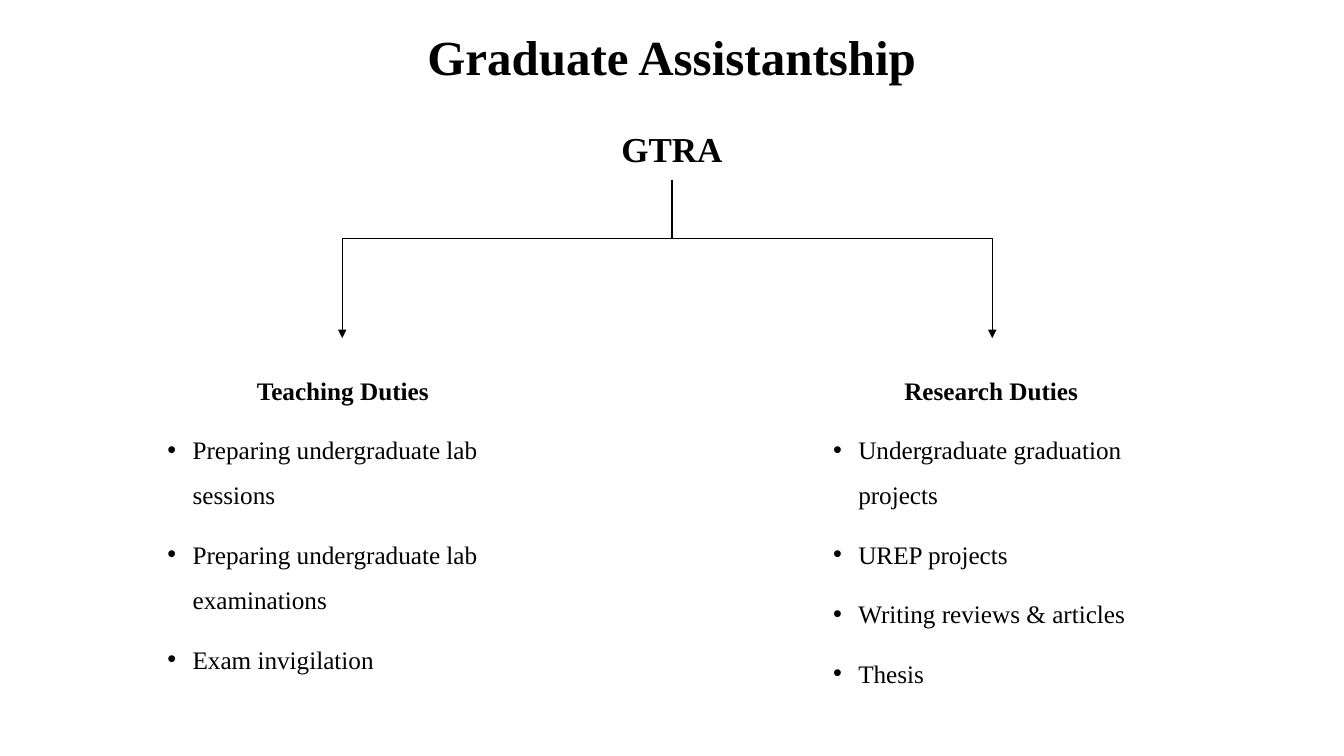
import pptx
import pptx.util
import pptx.dml.color
import pptx.enum.shapes
import pptx.enum.text
import pptx.oxml.ns
import lxml.etree

PX = 9525  # EMU per px, 96 px to the inch
FONT = "Times New Roman"
COLORS = {"background": "FFFFFF", "ink": "000000"}
CENTER = pptx.enum.text.PP_ALIGN.CENTER
INK = pptx.dml.color.RGBColor.from_string(COLORS["ink"])

presentation = pptx.Presentation()
presentation.slide_width = 1280 * PX
presentation.slide_height = 720 * PX
slide = presentation.slides.add_slide(presentation.slide_layouts[6])
slide.background.fill.solid()
slide.background.fill.fore_color.rgb = pptx.dml.color.RGBColor.from_string(COLORS["background"])


def add_text(left, top, width, height, lines, size):
    """Add a text box with a bold centred first line; later lines are bullets."""
    shape = slide.shapes.add_textbox(left * PX, top * PX, width * PX, height * PX)
    text_frame = shape.text_frame
    text_frame.word_wrap = True
    text_frame.text = "\n".join(lines)
    for index, paragraph in enumerate(text_frame.paragraphs):
        if index == 0:
            paragraph.alignment = CENTER
        else:
            properties = paragraph._p.get_or_add_pPr()
            properties.set("marL", str(24 * PX))
            properties.set("indent", str(-24 * PX))
            paragraph.space_before = pptx.util.Pt(10)
            for tag, key, value in (("a:buFont", "typeface", "Arial"), ("a:buChar", "char", "•")):
                element = lxml.etree.SubElement(properties, pptx.oxml.ns.qn(tag))
                element.set(key, value)
        font = paragraph.runs[0].font
        font.name = FONT
        font.size = pptx.util.Pt(size)
        font.bold = index == 0
        font.color.rgb = INK
    return text_frame


def add_line(start_x, start_y, end_x, end_y, arrow=False):
    connector = slide.shapes.add_connector(
        pptx.enum.shapes.MSO_CONNECTOR.STRAIGHT,
        start_x * PX, start_y * PX, end_x * PX, end_y * PX)
    connector.line.color.rgb = INK
    connector.line.width = pptx.util.Pt(1)
    if arrow:
        tail = lxml.etree.SubElement(connector.line._get_or_add_ln(), pptx.oxml.ns.qn("a:tailEnd"))
        tail.set("type", "triangle")
    lxml.etree.SubElement(connector._element.spPr, pptx.oxml.ns.qn("a:effectLst"))


# Title
title = add_text(88, 16, 1104, 139, ["Graduate Assistantship"], 35)
title.margin_top = 16 * PX
title.paragraphs[0].line_spacing = 0.9

# Duty lists
duties = [
    (150, 353, 334, ["Teaching Duties", "Preparing undergraduate lab sessions",
                     "Preparing undergraduate lab examinations", "Exam invigilation"]),
    (784, 320, 321, ["Research Duties", "Undergraduate graduation projects", "UREP projects",
                     "Writing reviews & articles", "Thesis"]),
]
for left, width, height, lines in duties:
    text_frame = add_text(left, 338, width, height, lines, 18)
    for paragraph in text_frame.paragraphs:
        paragraph.line_spacing = 1.5

# Branching lines from the root to both lists
branch_xs = (326, 945)
branch_y = 227
add_line(640, 171, 640, branch_y)
add_line(branch_xs[0], branch_y, branch_xs[1], branch_y)
for branch_x in branch_xs:
    add_line(branch_x, branch_y, branch_x, 322, arrow=True)

# Root label
add_text(535, 117, 210, 50, ["GTRA"], 25)

presentation.save("out.pptx")
